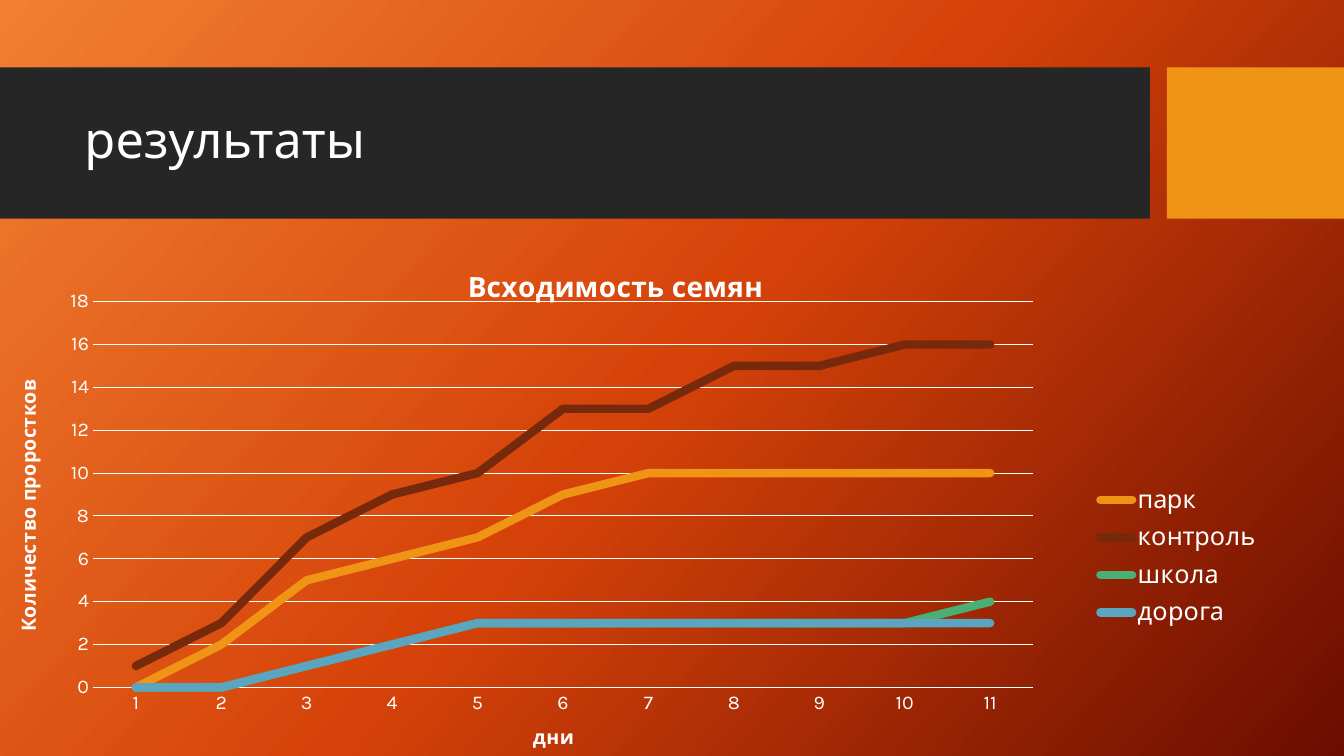
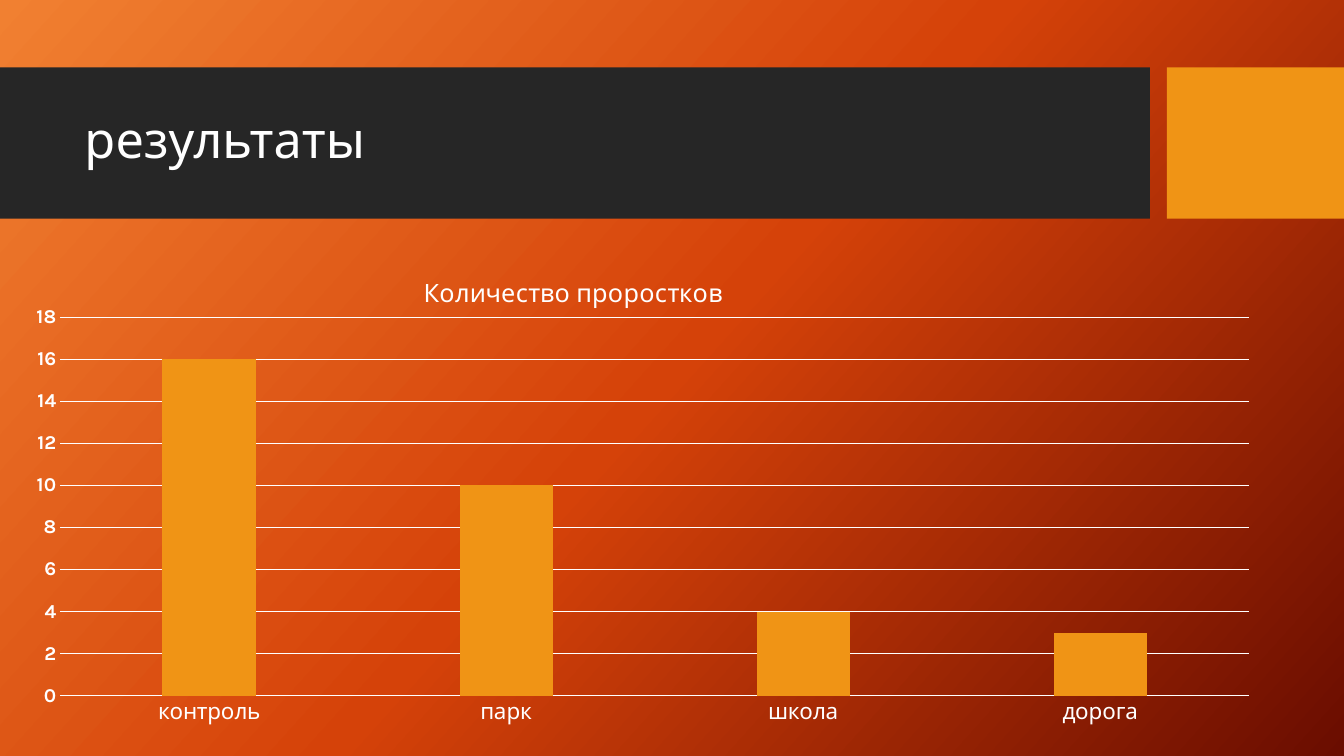
from copy import deepcopy

from lxml import etree
from pptx import Presentation
from pptx.chart.data import CategoryChartData
from pptx.dml.color import RGBColor
from pptx.enum.chart import XL_CHART_TYPE, XL_LEGEND_POSITION, XL_TICK_MARK
from pptx.enum.shapes import MSO_SHAPE
from pptx.enum.text import MSO_ANCHOR
from pptx.oxml.ns import qn
from pptx.util import Cm, Pt

LINE_CHART = XL_CHART_TYPE.LINE
COLUMN_CHART = XL_CHART_TYPE.COLUMN_CLUSTERED
LEGEND_RIGHT = XL_LEGEND_POSITION.RIGHT
NO_TICK = XL_TICK_MARK.NONE
RECTANGLE = MSO_SHAPE.RECTANGLE
MIDDLE = MSO_ANCHOR.MIDDLE

FONT = "Karla"
WHITE = "FFFFFF"
ORANGE = "F09415"
DARK = "262626"
BACKGROUND = [(0, "F18031"), (0.5, "D54209"), (1, "6A0D00")]
BACKGROUND_ANGLE = 42
BANDS = [(0, 28.98, DARK), (29.41, 4.46, ORANGE)]
BAND_TOP, BAND_HEIGHT = 1.7, 3.81

SLIDES = [
    {
        "title": "результаты",
        "type": LINE_CHART,
        "area": (-1.37, 6.12, 33.5, 12.93),
        "plot": (0.111, 0.115, 0.707, 0.755),
        "chart_title": ("Всходимость семян", 20, True, (0.389, 0.04)),
        "category_title": ("дни", 14, True, (0.439, 0.936)),
        "value_title": ("Количество проростков", 14, True, (0.05, 0.261)),
        "legend": (0.862, 0.458, 0.13, 0.31),
        "category_font": (14, False),
        "value_font": (14, False),
        "categories": [str(day) for day in range(1, 12)],
        "series": [
            ("парк", ORANGE, [0, 2, 5, 6, 7, 9, 10, 10, 10, 10, 10]),
            ("контроль", "76290B", [1, 3, 7, 9, 10, 13, 13, 15, 15, 16, 16]),
            ("школа", "4BAF73", [0, 0, 1, 2, 3, 3, 3, 3, 3, 3, 4]),
            ("дорога", "5AA6C0", [0, 0, 1, 2, 3, 3, 3, 3, 3, 3, 3]),
        ],
    },
    {
        "title": "результаты",
        "type": COLUMN_CHART,
        "area": (0.25, 6.1, 31.83, 12.45),
        "plot": (0.04, 0.152, 0.941, 0.767),
        "chart_title": ("Количество проростков", 18, False, (0.324, 0.06)),
        "category_font": (16, False),
        "value_font": (14, True),
        "categories": ["контроль", "парк", "школа", "дорога"],
        "series": [("Количество проростков", ORANGE, [16, 10, 4, 3])],
    },
]


def color(value):
    return RGBColor.from_string(value)


def style_font(font, size, bold=False):
    font.name = FONT
    font.size = Pt(size)
    font.bold = bold
    font.color.rgb = color(WHITE)


def style_line(line, value, width):
    line.color.rgb = color(value)
    line.width = Pt(width)


def set_background(master):
    fill = master.background.fill
    fill.gradient()
    fill.gradient_angle = 360 - BACKGROUND_ANGLE
    first = fill.gradient_stops[0]._gs
    first.addnext(deepcopy(first))
    for stop, (position, value) in zip(fill.gradient_stops, BACKGROUND):
        stop.position = position
        stop.color.rgb = color(value)


def set_layout(element, fractions, inner=False):
    for old in element.findall(qn("c:layout")):
        element.remove(old)
    layout = etree.Element(qn("c:layout"))
    manual = etree.SubElement(layout, qn("c:manualLayout"))
    settings = [("layoutTarget", "inner")] if inner else []
    settings += [("xMode", "edge"), ("yMode", "edge")]
    settings += zip("xywh", fractions)
    for name, value in settings:
        etree.SubElement(manual, qn("c:" + name)).set("val", str(value))
    overlay = element.find(qn("c:overlay"))
    if overlay is None:
        element.insert(0, layout)
    else:
        overlay.addprevious(layout)


def set_title(title, text, size, bold, corner):
    frame = title.text_frame
    frame.text = text
    style_font(frame.paragraphs[0].runs[0].font, size, bold)
    set_layout(title._element, corner)


def add_header(slide, text):
    for left, width, value in BANDS:
        band = slide.shapes.add_shape(
            RECTANGLE, Cm(left), Cm(BAND_TOP), Cm(width), Cm(BAND_HEIGHT))
        band.shadow.inherit = False
        band.fill.solid()
        band.fill.fore_color.rgb = color(value)
        band.line.fill.background()
    box = slide.shapes.add_textbox(Cm(1.88), Cm(2.08), Cm(26.7), Cm(3))
    frame = box.text_frame
    frame.word_wrap = True
    frame.vertical_anchor = MIDDLE
    frame.text = text
    para = frame.paragraphs[0]
    para.line_spacing = 0.9
    style_font(para.runs[0].font, 36)


def style_axes(chart, content):
    category, value = chart.category_axis, chart.value_axis
    for axis, key in ((category, "category"), (value, "value")):
        axis.major_tick_mark = NO_TICK
        axis.minor_tick_mark = NO_TICK
        style_font(axis.tick_labels.font, *content[key + "_font"])
        if key + "_title" in content:
            set_title(axis.axis_title, *content[key + "_title"])
    style_line(category.format.line, WHITE, 0.75)
    value.format.line.fill.background()
    value.has_major_gridlines = True
    style_line(value.major_gridlines.format.line, WHITE, 0.75)
    value.minimum_scale, value.maximum_scale, value.major_unit = 0, 18, 2


def style_series(chart, content):
    plot = chart.plots[0]
    plot.vary_by_categories = False
    is_line = content["type"] == LINE_CHART
    if not is_line:
        plot.gap_width = 219
        plot.overlap = -27
    for series, (_, value, _) in zip(plot.series, content["series"]):
        if is_line:
            series.smooth = False
            style_line(series.format.line, value, 6)
            series._element.find(".//" + qn("a:ln")).set("cap", "rnd")
        else:
            series.format.fill.solid()
            series.format.fill.fore_color.rgb = color(value)


def add_chart(slide, content):
    data = CategoryChartData()
    data.categories = content["categories"]
    for name, _, values in content["series"]:
        data.add_series(name, values)
    area = [Cm(length) for length in content["area"]]
    chart = slide.shapes.add_chart(content["type"], *area, data).chart
    style_font(chart.font, 10)
    set_title(chart.chart_title, *content["chart_title"])
    style_axes(chart, content)
    style_series(chart, content)
    set_layout(chart._chartSpace.find(".//" + qn("c:plotArea")), content["plot"], inner=True)
    chart.has_legend = "legend" in content
    if chart.has_legend:
        legend = chart.legend
        legend.position = LEGEND_RIGHT
        legend.include_in_layout = False
        style_font(legend.font, 18)
        set_layout(legend._element, content["legend"])


def main():
    deck = Presentation()
    deck.slide_width, deck.slide_height = Cm(33.87), Cm(19.05)
    set_background(deck.slide_master)
    for content in SLIDES:
        slide = deck.slides.add_slide(deck.slide_layouts[6])
        add_header(slide, content["title"])
        add_chart(slide, content)
    deck.save("out.pptx")


if __name__ == "__main__":
    main()
